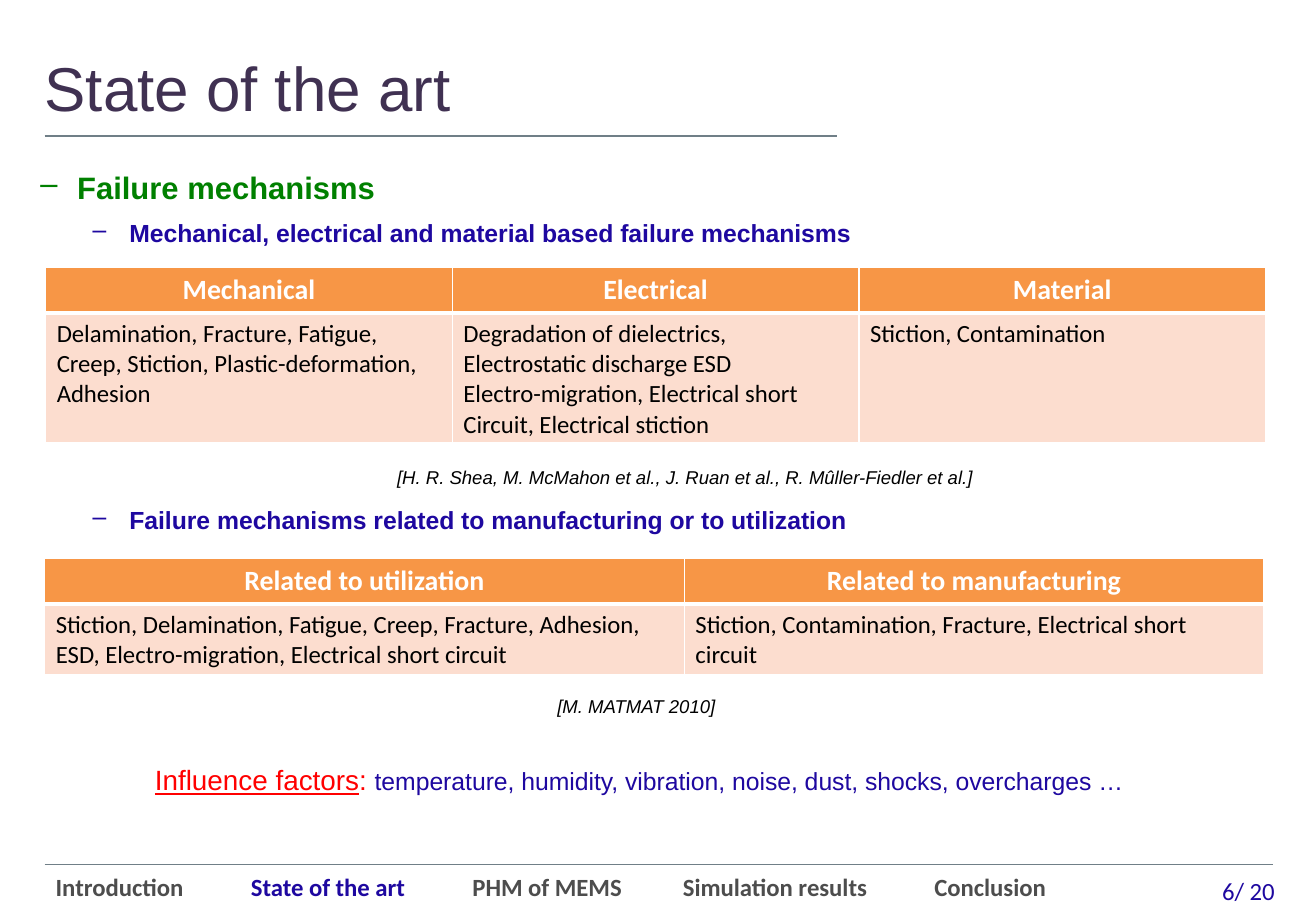
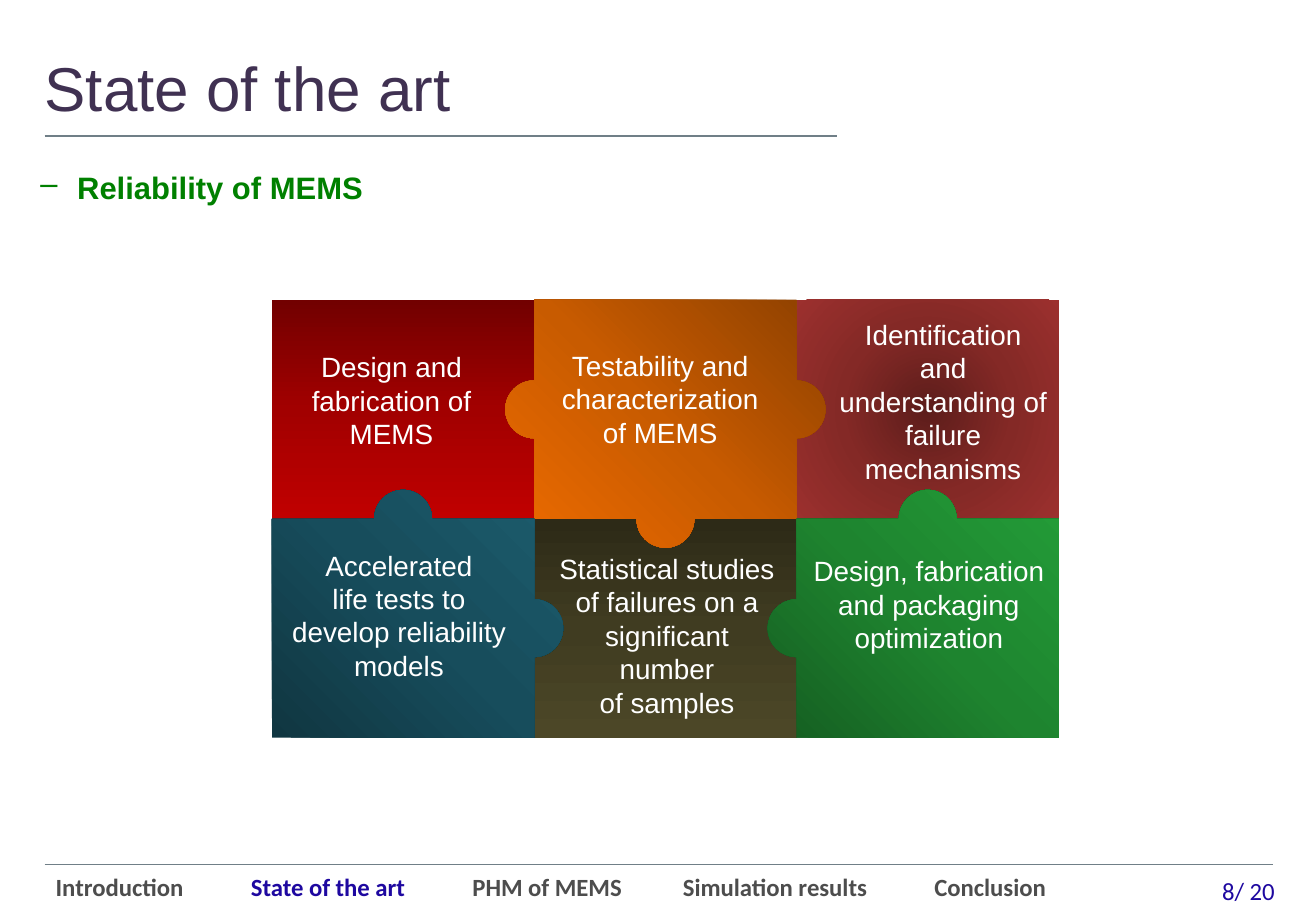
from math import cos, pi, sin

from pptx import Presentation
from pptx.dml.color import RGBColor
from pptx.enum.shapes import MSO_CONNECTOR
from pptx.enum.text import MSO_ANCHOR, PP_ALIGN
from pptx.oxml import parse_xml
from pptx.oxml.ns import nsdecls, qn
from pptx.util import Cm, Pt

LEFT, MID = PP_ALIGN.LEFT, PP_ALIGN.CENTER
TOP, CENTRE = MSO_ANCHOR.TOP, MSO_ANCHOR.MIDDLE
LINE = MSO_CONNECTOR.STRAIGHT

HUES = {
    "title": "403152", "rule": "707F87", "blue": "1E08A0", "green": "008000",
    "grey": "4D4D4D", "red": "FF0000", "black": "000000", "white": "FFFFFF",
    "head": "F79646", "body": "FCDDCF",
}
SHADES = {
    "red": ("720000", "A20000", "C00000"),
    "orange": ("8D4000", "C85B00", "EE6B00"),
    "maroon": ("5D1D1B", "842926", "9C302E"),
    "teal": ("103641", "174D5C", "1C5C6D"),
    "olive": ("2D2A17", "403C21", "4C4727"),
    "green": ("155D21", "1E842F", "239D38"),
}
LOOKS = {
    "title": dict(name="Arial", size=40, hue="title"),
    "main": dict(name="Arial", size=20, hue="green", bold=True),
    "sub": dict(name="Arial", size=16, hue="blue", bold=True),
    "cite": dict(name="Arial", size=12, hue="black", italic=True),
    "piece": dict(name="Arial", size=18, hue="white"),
    "head": dict(name="Calibri", size=18, hue="white", bold=True),
    "body": dict(name="Calibri", size=16, hue="black", bold=False),
    "nav": dict(name="Calibri", size=16, hue="grey", bold=True),
    "here": dict(name="Calibri", size=16, hue="blue", bold=True),
    "page": dict(name="Calibri", size=16, hue="blue"),
    "label": dict(name="Arial", size=18, hue="red", underline=True),
    "colon": dict(name="Arial", size=18, hue="red"),
    "list": dict(name="Arial", size=16, hue="blue"),
}
PARTS = ["Introduction", "State of the art", "PHM of MEMS",
         "Simulation results", "Conclusion"]
TABS = [4.45, 9.5, 14.3, 20.03]

# Puzzle grid: left, top, column width, row height and knob radius in cm
GRID_X, GRID_Y, WIDE, HIGH, KNOB = 6.2, 6.84, 5.98, 4.99, 0.66
SIDES = {"top": (1, 0), "right": (0, 1), "bottom": (-1, 0), "left": (0, -1)}
# Pieces with knobs come last, so that the knobs cover their neighbours.
PIECES = [
    # shade, column, row, knobs, gradient angle (None: from the centre)
    ("red", 0, 0, (), 90),
    ("maroon", 2, 0, (), None),
    ("olive", 1, 1, (), 90),
    ("orange", 1, 0, ("left", "right", "bottom"), 135),
    ("teal", 0, 1, ("top", "right"), 315),
    ("green", 2, 1, ("top", "left"), 315),
]
WORDS = [
    # left, top, width, height, paragraphs
    (6.22, 7.85, 5.41, 2.57, ["Design and fabrication of MEMS"]),
    (12.55, 7.82, 5, 2.57, ["Testability and characterization of MEMS"]),
    (18.87, 7.11, 5.26, 4.11,
     ["Identification and understanding of failure mechanisms"]),
    (18.29, 12.5, 5.77, 3.33,
     ["Design, fabrication and packaging optimization"]),
    (12.45, 12.45, 5.51, 4.11,
     ["Statistical studies of failures on a significant number",
      "of samples"]),
]


def tint(fill, hue):
    fill.solid()
    fill.fore_color.rgb = RGBColor.from_string(HUES[hue])


def style(font, look):
    for key, value in LOOKS[look].items():
        if key == "hue":
            font.color.rgb = RGBColor.from_string(HUES[value])
        else:
            setattr(font, key, Pt(value) if key == "size" else value)


def write(frame, paras, look, align=LEFT):
    """Fill a frame; a paragraph is a string or a list of (text, look) runs."""
    for i, para in enumerate(paras):
        line = frame.paragraphs[0] if i == 0 else frame.add_paragraph()
        line.alignment = align
        for text, kind in [(para, look)] if isinstance(para, str) else para:
            for j, bit in enumerate(text.split("\v")):
                if j:
                    line.add_line_break()
                run = line.add_run()
                run.text = bit
                style(run.font, kind)


def border(cell, bottom):
    for side in "LRTB":
        width = Pt(bottom if side == "B" else 1)
        cell._tc.get_or_add_tcPr().append(parse_xml(
            f'<a:ln{side} {nsdecls("a")} w="{width}"><a:solidFill>'
            f'<a:srgbClr val="{HUES["white"]}"/></a:solidFill></a:ln{side}>'))


def blend(shape, shade, angle):
    """Give a shape a three-stop gradient, linear or from its centre."""
    stops = "".join(
        f'<a:gs pos="{i * 50000}"><a:srgbClr val="{hue}"/></a:gs>'
        for i, hue in enumerate(SHADES[shade]))
    if angle is None:
        way = ('<a:path path="circle"><a:fillToRect l="50000" t="50000" '
               'r="50000" b="50000"/></a:path>')
    else:
        way = f'<a:lin ang="{angle * 60000}" scaled="0"/>'
    shape.fill.gradient()
    props = shape._element.spPr
    props.replace(props.find(qn("a:gradFill")), parse_xml(
        f'<a:gradFill {nsdecls("a")} rotWithShape="1">'
        f'<a:gsLst>{stops}</a:gsLst>{way}</a:gradFill>'))


def outline(x, y, knobs):
    """Corner points of a piece, clockwise, with half circles for knobs."""
    points = []
    for side, (dx, dy) in SIDES.items():
        points.append((x, y))
        if side in knobs:
            mx, my = x + dx * WIDE / 2, y + dy * HIGH / 2
            for step in range(25):
                along = -KNOB * cos(pi * step / 24)
                out = KNOB * sin(pi * step / 24)
                points.append((mx + along * dx + out * dy,
                               my + along * dy - out * dx))
        x, y = x + dx * WIDE, y + dy * HIGH
    return [(Cm(px), Cm(py)) for px, py in points]


class Deck:
    def __init__(self):
        self.prs = Presentation()
        self.prs.slide_width, self.prs.slide_height = Cm(30), Cm(21)

    def start(self, title, page):
        """Begin a slide with its title, rules, section bar and page number."""
        slide = self.prs.slides.add_slide(self.prs.slide_layouts[5])
        self.shapes = slide.shapes
        head = self.shapes.title
        head.left, head.top, head.width, head.height = map(
            Cm, (1.02, 0.93, 27, 2.08))
        self.setup(head.text_frame, CENTRE, (0, 0))
        write(head.text_frame, [title], "title")
        self.rule(1.02, 19.08, 3.1)
        self.rule(1.02, 29.01, 19.71)
        self.text(27.61, 19.84, 2.39, 0.94, [f"{page}/ 20"], "page", wrap=False)
        runs = [(("\t" if i else "") + part, "here" if part == title else "nav")
                for i, part in enumerate(PARTS)]
        bar = self.text(0.99, 19.74, 24, 0.97, [], "nav", CENTRE, pad=(0.28, 0.15))
        stops = "".join(f'<a:tab pos="{Cm(tab)}" algn="l"/>' for tab in TABS)
        bar.paragraphs[0]._p.get_or_add_pPr().append(parse_xml(
            f'<a:tabLst {nsdecls("a")}>{stops}</a:tabLst>'))
        write(bar, [runs], "nav")

    def setup(self, frame, anchor, pad, wrap=True):
        side, edge = map(Cm, pad)
        values = dict(word_wrap=wrap, vertical_anchor=anchor, margin_left=side,
                      margin_right=side, margin_top=edge, margin_bottom=edge)
        for key, value in values.items():
            setattr(frame, key, value)

    def rule(self, start, end, y):
        line = self.shapes.add_connector(LINE, Cm(start), Cm(y), Cm(end), Cm(y))
        line.line.width = Pt(1)
        tint(line.line.fill, "rule")
        line._element.spPr.append(parse_xml(f'<a:effectLst {nsdecls("a")}/>'))

    def text(self, x, y, w, h, paras, look, anchor=TOP, align=LEFT,
             pad=(0.25, 0.13), wrap=True):
        frame = self.shapes.add_textbox(*map(Cm, (x, y, w, h))).text_frame
        self.setup(frame, anchor, pad, wrap)
        write(frame, paras, look, align)
        return frame

    def bullet(self, x, y, w, text, look):
        frame = self.text(x, y, w, 1.19, [], look, CENTRE)
        props = frame.paragraphs[0]._p.get_or_add_pPr()
        props.set("marL", str(Cm(0.84)))
        props.set("indent", str(-Cm(0.84)))
        props.append(parse_xml(f'<a:buChar {nsdecls("a")} char="–"/>'))
        write(frame, [text], look)

    def table(self, x, y, cols, rows, cells):
        """Draw a table; each cell is a list of paragraphs."""
        grid = self.shapes.add_table(
            len(rows), len(cols), Cm(x), Cm(y), Cm(sum(cols)), Cm(sum(rows))).table
        for col, width in zip(grid.columns, cols):
            col.width = Cm(width)
        for i, (row, height) in enumerate(zip(grid.rows, rows)):
            row.height = Cm(height)
            look, align, edge = ("body", LEFT, 1) if i else ("head", MID, 3)
            for cell, paras in zip(row.cells, cells[i]):
                border(cell, edge)
                tint(cell.fill, look)
                write(cell.text_frame, paras, look, align)

    def piece(self, shade, col, row, knobs, angle):
        points = outline(GRID_X + col * WIDE, GRID_Y + row * HIGH, knobs)
        path = self.shapes.build_freeform(*points[0], scale=1.0)
        path.add_line_segments(points[1:], close=True)
        shape = path.convert_to_shape()
        shape.shadow.inherit = False
        shape.line.fill.background()
        blend(shape, shade, angle)


def failure(deck):
    deck.start("State of the art", 6)
    deck.bullet(0.67, 3.68, 28.6, "Failure mechanisms", "main")
    deck.bullet(1.86, 4.72, 25.4,
                "Mechanical, electrical and material based failure mechanisms", "sub")
    deck.table(1.04, 6.1, [9.27] * 3, [1.04, 2.95], [
        [["Mechanical"], ["Electrical"], ["Material"]],
        [["Delamination, Fracture, Fatigue, Creep, Stiction, "
          "Plastic-deformation, Adhesion"],
         ["Degradation of dielectrics, Electrostatic discharge ESD",
          "Electro-migration, Electrical short",
          "Circuit, Electrical stiction"],
         ["Stiction, Contamination"]]])
    deck.text(6.53, 10.49, 18.19, 0.76,
              ["[H. R. Shea, M. McMahon et al., J. Ruan et al., "
               "R. Mûller-Fiedler et al.]"], "cite", align=MID)
    deck.bullet(1.86, 11.25, 25.4,
                "Failure mechanisms related to manufacturing or to utilization", "sub")
    deck.table(1.02, 12.73, [14.58, 13.21], [1.04, 1.6], [
        [["Related to utilization"], ["Related to manufacturing"]],
        [["Stiction, Delamination, Fatigue, Creep, Fracture, Adhesion, ESD, "
          "Electro-migration, Electrical short circuit"],
         ["Stiction, Contamination, Fracture, Electrical short circuit"]]])
    deck.text(11.13, 15.72, 6.76, 0.76, ["[M. MATMAT 2010]"], "cite", align=MID)
    deck.text(3.3, 17.3, 23.72, 0.99, [[
        ("Influence factors", "label"), (": ", "colon"),
        ("temperature, humidity, vibration, noise, dust, shocks, overcharges …",
         "list")]], "list", pad=(0.23, 0.1))


def puzzle(deck):
    deck.start("State of the art", 8)
    deck.bullet(0.67, 3.68, 28.6, "Reliability of MEMS", "main")
    for piece in PIECES:
        deck.piece(*piece)
    for x, y, w, h, paras in WORDS:
        deck.text(x, y, w, h, paras, "piece", align=MID)
    tests = deck.text(6.2, 12.37, 5.79, 3.33,
                      ["Accelerated\vlife tests to develop reliability models"],
                      "piece", align=MID)
    # The hanging indent moves the first line to the left.
    tests.paragraphs[0]._p.get_or_add_pPr().set("indent", str(-Cm(1.07)))


def main():
    deck = Deck()
    failure(deck)
    puzzle(deck)
    deck.prs.save("out.pptx")


if __name__ == "__main__":
    main()
